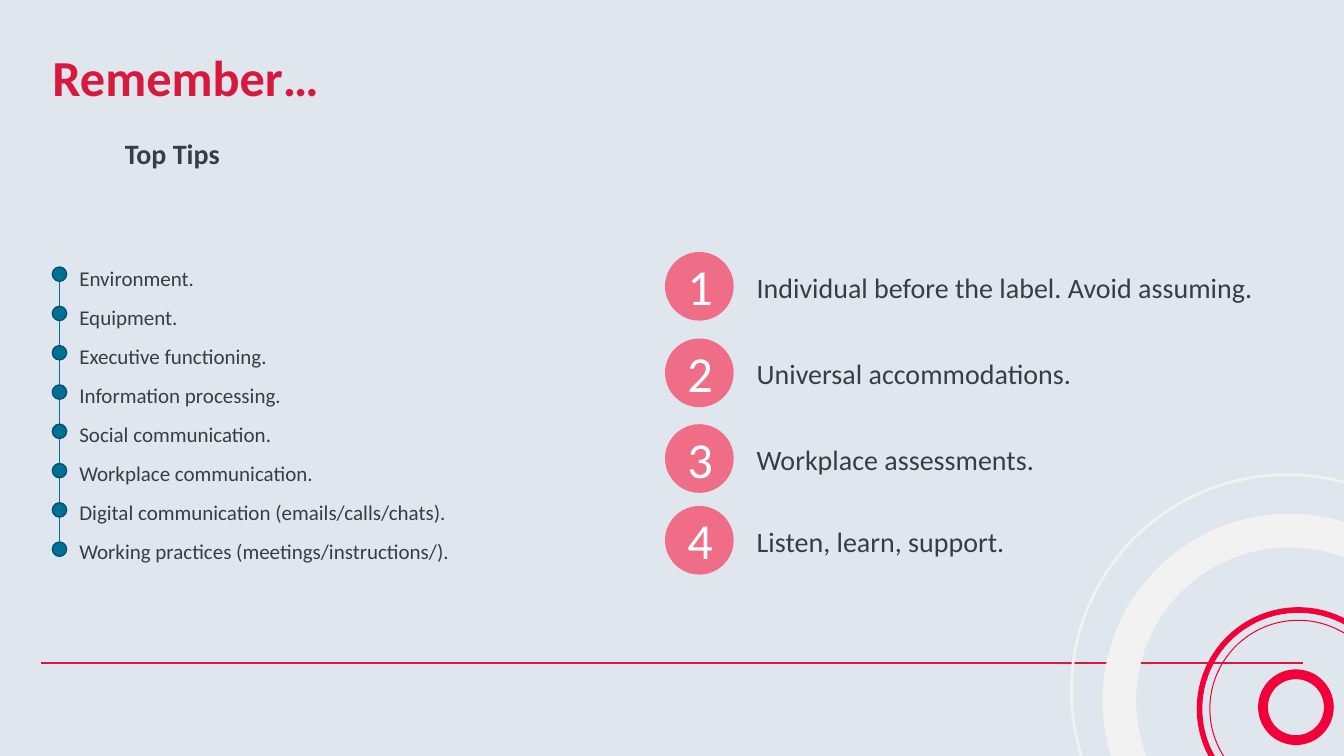
from math import cos, radians, sin

from lxml.etree import SubElement
from pptx import Presentation
from pptx.dml.color import RGBColor
from pptx.enum.shapes import MSO_CONNECTOR as CONN, MSO_SHAPE as SHAPE
from pptx.enum.text import MSO_AUTO_SIZE as AUTO, PP_ALIGN as ALIGN
from pptx.oxml.ns import qn
from pptx.util import Cm, Pt

BACKGROUND = RGBColor(0xDF, 0xE6, 0xED)
CRIMSON = RGBColor(0xD8, 0x18, 0x3D)
RED = RGBColor(0xF2, 0x00, 0x3A)
PALE = RGBColor(0xF2, 0xF2, 0xF2)
PINK = RGBColor(0xEF, 0x6D, 0x86)
BLUE = RGBColor(0x01, 0x70, 0x97)
DARK_BLUE = RGBColor(0x01, 0x53, 0x70)
INK = RGBColor(0x3B, 0x3C, 0x43)
WHITE = RGBColor(0xFF, 0xFF, 0xFF)

TOPICS = [
    "Environment.",
    "Equipment.",
    "Executive functioning.",
    "Information processing.",
    "Social communication.",
    "Workplace communication.",
    "Digital communication (emails/calls/chats).",
    "Working practices (meetings/instructions/).",
]
TIPS = [
    (6.35, 14, "Individual before the label. Avoid assuming."),
    (8.53, 14.28, "Universal accommodations."),
    (10.69, 9.02, "Workplace assessments."),
    (12.75, 9.02, "Listen, learn, support."),
]
RINGS = [
    (32.66, 17.82, 0.83, RED, 7, 0, -360),
    (32.72, 17.86, 2.23, RED, 0.75, 0, -360),
    (32.72, 17.86, 2.49, RED, 4, 0, -360),
    (32.49, 17.65, 4.28, PALE, 24, -50, -203),
    (32.44, 17.4, 5.44, PALE, 2, -59, -201),
]


class SlideBuilder:
    """Draws styled elements on the current slide, with lengths in centimetres."""

    font = "Calibri"

    def __init__(self, s):
        self.s = s
        s.background.fill.solid()
        s.background.fill.fore_color.rgb = BACKGROUND

    def text(self, x, y, w, h, lines, size, color=INK, bold=False,
             align=ALIGN.LEFT, spacing=None, inset=False):
        tf = self.s.shapes.add_textbox(Cm(x), Cm(y), Cm(w), Cm(h)).text_frame
        tf.word_wrap = True
        if inset:
            tf.auto_size = AUTO.SHAPE_TO_FIT_TEXT
        else:
            tf.margin_left = tf.margin_top = tf.margin_right = tf.margin_bottom = 0
        for i, line in enumerate(lines):
            p = tf.add_paragraph() if i else tf.paragraphs[0]
            p.alignment = align
            p.line_spacing = spacing
            r = p.add_run()
            r.text = line
            r.font.name = self.font
            r.font.size = Pt(size)
            r.font.bold = bold
            r.font.color.rgb = color

    def line(self, x1, y1, x2, y2, color, width):
        c = self.s.shapes.add_connector(CONN.STRAIGHT, Cm(x1), Cm(y1), Cm(x2), Cm(y2))
        c.line.color.rgb = color
        c.line.width = Pt(width)
        SubElement(c._element.spPr, qn("a:effectLst"))

    def dot(self, x, y, size, fill, outline=None):
        sp = self.s.shapes.add_shape(SHAPE.OVAL, Cm(x), Cm(y), Cm(size), Cm(size))
        sp.shadow.inherit = False
        sp.fill.solid()
        sp.fill.fore_color.rgb = fill
        if outline is None:
            sp.line.fill.background()
        else:
            sp.line.color.rgb = outline
            sp.line.width = Pt(1)

    def ring(self, cx, cy, radius, color, width, start, end, steps=90):
        angles = [radians(start + (end - start) * i / steps) for i in range(steps + 1)]
        points = [(Cm(cx + radius * cos(a)), Cm(cy + radius * sin(a))) for a in angles]
        fb = self.s.shapes.build_freeform(*points[0])
        fb.add_line_segments(points[1:], close=end - start == -360)
        sp = fb.convert_to_shape()
        sp.shadow.inherit = False
        sp.fill.background()
        sp.line.color.rgb = color
        sp.line.width = Pt(width)


def main():
    prs = Presentation()
    prs.slide_width, prs.slide_height = Cm(33.87), Cm(19.05)
    b = SlideBuilder(prs.slides.add_slide(prs.slide_layouts[6]))

    b.line(1.04, 16.71, 32.84, 16.71, CRIMSON, 1.25)
    for ring in RINGS:
        b.ring(*ring)

    b.text(1.32, 1.17, 31.5, 1.55, ["Remember…"], 36, CRIMSON, bold=True)
    b.text(3.15, 3.45, 11.25, 1.14, ["Top Tips"], 20, bold=True)

    b.text(1.75, 6.22, 11.1, 8.1, TOPICS, 15, spacing=1.55, inset=True)
    b.line(1.5, 7.09, 1.5, 14.02, BLUE, 0.5)
    for i in range(len(TOPICS)):
        b.dot(1.32, 6.73 + 0.99 * i, 0.36, BLUE, DARK_BLUE)

    for number, (top, width, tip) in enumerate(TIPS, 1):
        b.dot(16.76, top, 1.73, PINK)
        b.text(16.78, top + 0.09, 1.73, 1.55, [str(number)], 36, WHITE, align=ALIGN.CENTER)
        b.text(18.82, top + 0.34, width, 1.12, [tip], 20, inset=True)

    prs.save("out.pptx")


if __name__ == "__main__":
    main()
